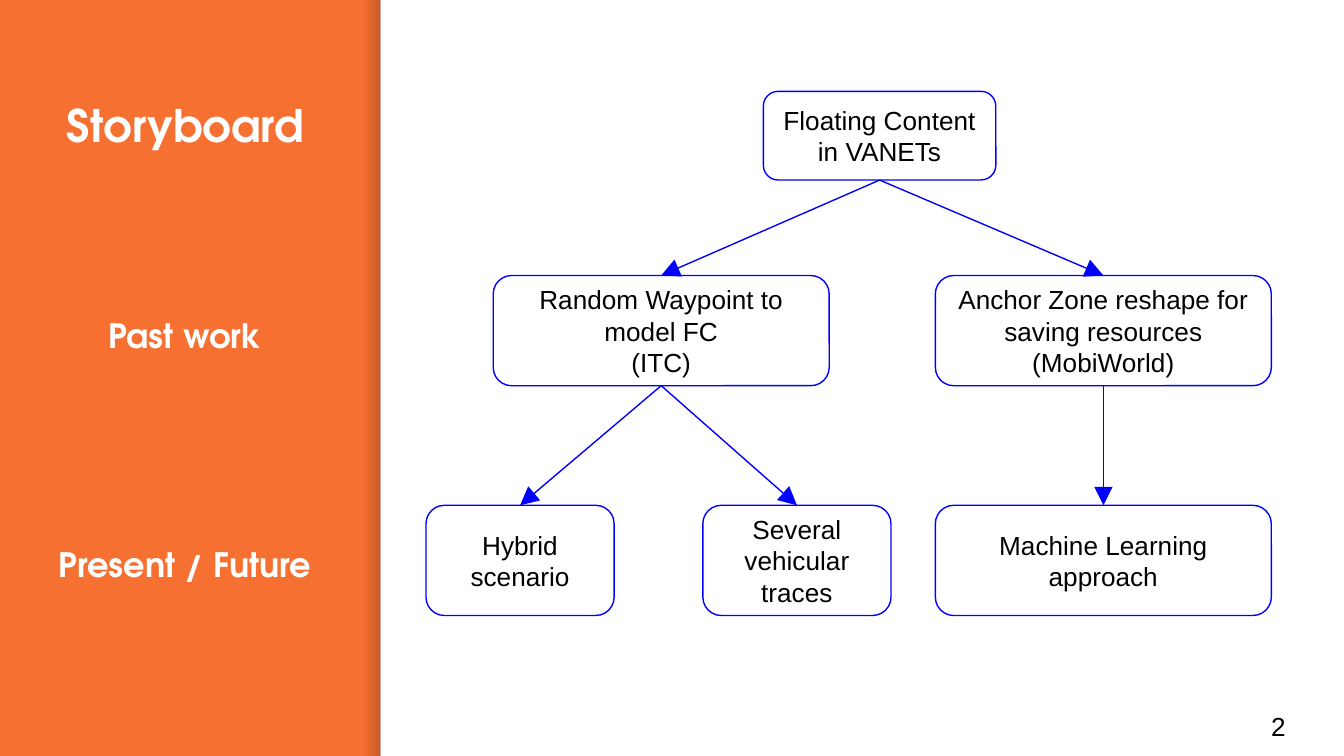
from pptx import Presentation
from pptx.dml.color import RGBColor
from pptx.enum.shapes import MSO_CONNECTOR, MSO_SHAPE
from pptx.enum.text import MSO_ANCHOR, PP_ALIGN
from pptx.oxml.ns import qn
from pptx.util import Inches, Pt
from lxml.etree import SubElement

ORANGE = RGBColor(0xF6, 0x70, 0x31)
WHITE = RGBColor(0xFF, 0xFF, 0xFF)
BLACK = RGBColor(0x00, 0x00, 0x00)
BLUE = RGBColor(0x00, 0x00, 0xFF)
SHADE = RGBColor(0x00, 0x00, 0x14)
HEADING_FONT = "TeX Gyre Adventor"


def set_text(sp, text, size=14, font="Arial", color=BLACK, bold=False,
             align=PP_ALIGN.CENTER, anchor=MSO_ANCHOR.MIDDLE):
    tf = sp.text_frame
    tf.word_wrap = True
    tf.vertical_anchor = anchor
    tf.margin_left = tf.margin_right = Inches(0.1)
    tf.margin_top = tf.margin_bottom = Inches(0.1)
    for i, line in enumerate(text.split("\n")):
        p = tf.paragraphs[0] if i == 0 else tf.add_paragraph()
        p.alignment = align
        r = p.add_run()
        r.text = line
        r.font.size = Pt(size)
        r.font.name = font
        r.font.bold = bold
        r.font.color.rgb = color


# 16:9 slide
prs = Presentation()
prs.slide_width = Inches(10)
prs.slide_height = Inches(10 * 9 / 16)
s = prs.slides.add_slide(prs.slide_layouts[6])

# Orange background, with a white panel on the right
s.background.fill.solid()
s.background.fill.fore_color.rgb = ORANGE
panel = s.shapes.add_shape(MSO_SHAPE.RECTANGLE, Inches(2.83), 0,
                           Inches(7.17), prs.slide_height)
panel.shadow.inherit = False
panel.fill.solid()
panel.fill.fore_color.rgb = WHITE
panel.line.fill.background()

# Soft shade along the panel's left edge
shade = s.shapes.add_shape(MSO_SHAPE.RECTANGLE, Inches(2.7), 0,
                           Inches(0.13), prs.slide_height)
shade.shadow.inherit = False
shade.line.fill.background()
shade.fill.gradient()
shade.fill.gradient_angle = 0
for stop in shade.fill.gradient_stops:
    stop.color.rgb = SHADE
stop_colors = shade._element.spPr.iter(qn("a:srgbClr"))
for clr, alpha in zip(list(stop_colors), ("0", "20000")):
    SubElement(clr, qn("a:alpha")).set("val", alpha)

# Title and row labels
for text, x, y, w, h, size in [
    ("Storyboard", 0.26, 0.63, 2.24, 0.66, 24),
    ("Past work", -0.5, 2.24, 3.75, 0.44, 18),
    ("Present / Future", -0.5, 3.95, 3.75, 0.44, 18),
]:
    sp = s.shapes.add_textbox(Inches(x), Inches(y), Inches(w), Inches(h))
    set_text(sp, text, size=size, font=HEADING_FONT, color=WHITE, bold=True,
             anchor=MSO_ANCHOR.TOP)

# Slide number
sp = s.shapes.add_textbox(Inches(9.36), Inches(5.19), Inches(0.6), Inches(0.43))
set_text(sp, "2", align=PP_ALIGN.LEFT)

# Tree boxes: key, text, left, width, row
rows = [(0.68, 0.66), (2.05, 0.82), (3.76, 0.82)]
boxes = {}
for key, text, x, w, row in [
    ("root", "Floating Content in VANETs", 5.68, 1.73, 0),
    ("waypoint", "Random Waypoint to model FC\n(ITC)", 3.67, 2.5, 1),
    ("anchor", "Anchor Zone reshape for saving resources\n(MobiWorld)", 6.96, 2.5, 1),
    ("hybrid", "Hybrid scenario", 3.17, 1.4, 2),
    ("traces", "Several vehicular traces", 5.23, 1.4, 2),
    ("learning", "Machine Learning approach", 6.96, 2.5, 2),
]:
    y, h = rows[row]
    sp = s.shapes.add_shape(MSO_SHAPE.ROUNDED_RECTANGLE, Inches(x), Inches(y),
                            Inches(w), Inches(h))
    sp.shadow.inherit = False
    sp.fill.background()
    sp.line.color.rgb = BLUE
    sp.line.width = Pt(0.75)
    set_text(sp, text)
    boxes[key] = sp

# Arrows from each parent's bottom to its child's top
for parent, child in [("root", "waypoint"), ("root", "anchor"),
                      ("waypoint", "hybrid"), ("waypoint", "traces"),
                      ("anchor", "learning")]:
    arrow = s.shapes.add_connector(MSO_CONNECTOR.STRAIGHT, 0, 0, 0, 0)
    arrow.begin_connect(boxes[parent], 2)
    arrow.end_connect(boxes[child], 0)
    arrow.line.color.rgb = BLUE
    arrow.line.width = Pt(0.75)
    head = SubElement(arrow.line._get_or_add_ln(), qn("a:tailEnd"))
    head.set("type", "triangle")
    head.set("w", "lg")
    head.set("len", "lg")
    SubElement(arrow._element.spPr, qn("a:effectLst"))

prs.save("out.pptx")
